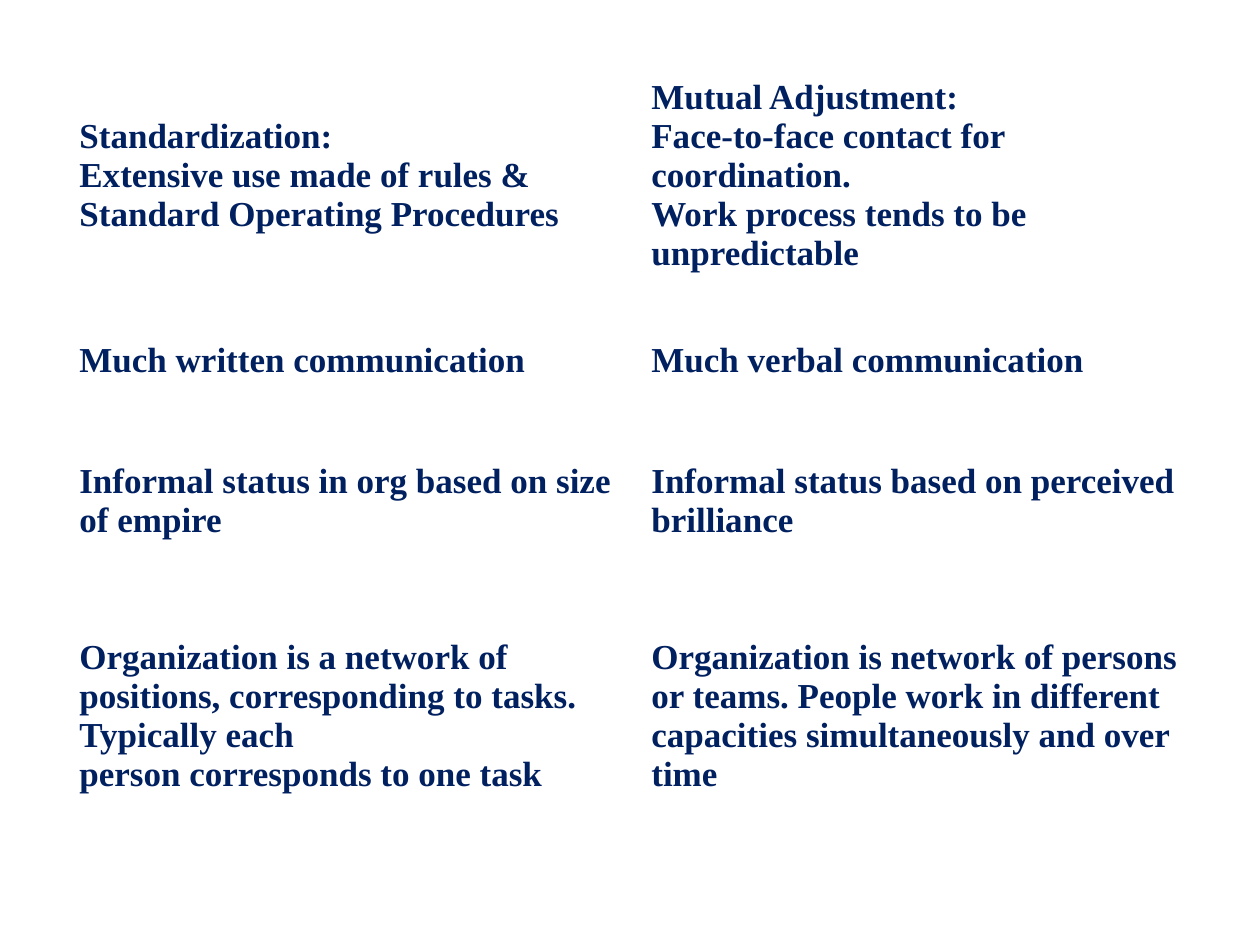
from pptx import Presentation
from pptx import util as u
from pptx.dml.color import RGBColor
from pptx.enum import text

COLORS = {"navy": "002060"}
COLUMN_WIDTH = 4.54
ROW_HEIGHTS = [2.13, 0.81, 1.41, 2.01]
COMPARISON = [
    ("Standardization:\nExtensive use made of rules & Standard Operating Procedures",
     "Mutual Adjustment:\nFace-to-face contact for coordination.\n"
     "Work process tends to be unpredictable"),
    ("Much written communication", "Much verbal communication"),
    ("Informal status in org based on size of empire",
     "Informal status based on perceived \nbrilliance"),
    ("Organization is a network of positions, corresponding to tasks. "
     "Typically each \nperson corresponds to one task",
     "Organization is network of persons or teams. People work in different "
     "capacities simultaneously and over time"),
]


class SlideBuilder:
    """Holds the text style and the current slide, and adds elements to it."""

    def __init__(self, slide):
        self.slide = slide
        self.font = {"name": "Times New Roman", "size": u.Pt(20), "bold": True}
        self.color = RGBColor.from_string(COLORS["navy"])
        margins = ("margin_left", "margin_right", "margin_top", "margin_bottom")
        self.cell = dict.fromkeys(margins, u.Inches(0.05))
        self.cell["vertical_anchor"] = text.MSO_ANCHOR.MIDDLE

    def add_table(self, left, top, column_width, row_heights, rows):
        columns = len(rows[0])
        table = self.slide.shapes.add_table(
            len(rows), columns, u.Inches(left), u.Inches(top),
            u.Inches(column_width * columns), u.Inches(sum(row_heights))).table
        table.first_row = table.horz_banding = False
        for column in table.columns:
            column.width = u.Inches(column_width)
        for row, height, contents in zip(table.rows, row_heights, rows):
            row.height = u.Inches(height)
            for cell, content in zip(row.cells, contents):
                self.fill_cell(cell, content)

    def fill_cell(self, cell, content):
        cell.fill.background()
        for name, value in self.cell.items():
            setattr(cell, name, value)
        para = cell.text_frame.paragraphs[0]
        para.text = content.replace("\n", "\v")
        for span in para.runs:
            for name, value in self.font.items():
                setattr(span.font, name, value)
            span.font.color.rgb = self.color


def main():
    deck = Presentation()
    deck.slide_width, deck.slide_height = u.Inches(10), u.Inches(7.5)
    page = SlideBuilder(deck.slides.add_slide(deck.slide_layouts[6]))
    page.add_table(0.58, 0.33, COLUMN_WIDTH, ROW_HEIGHTS, COMPARISON)
    deck.save("out.pptx")


if __name__ == "__main__":
    main()
